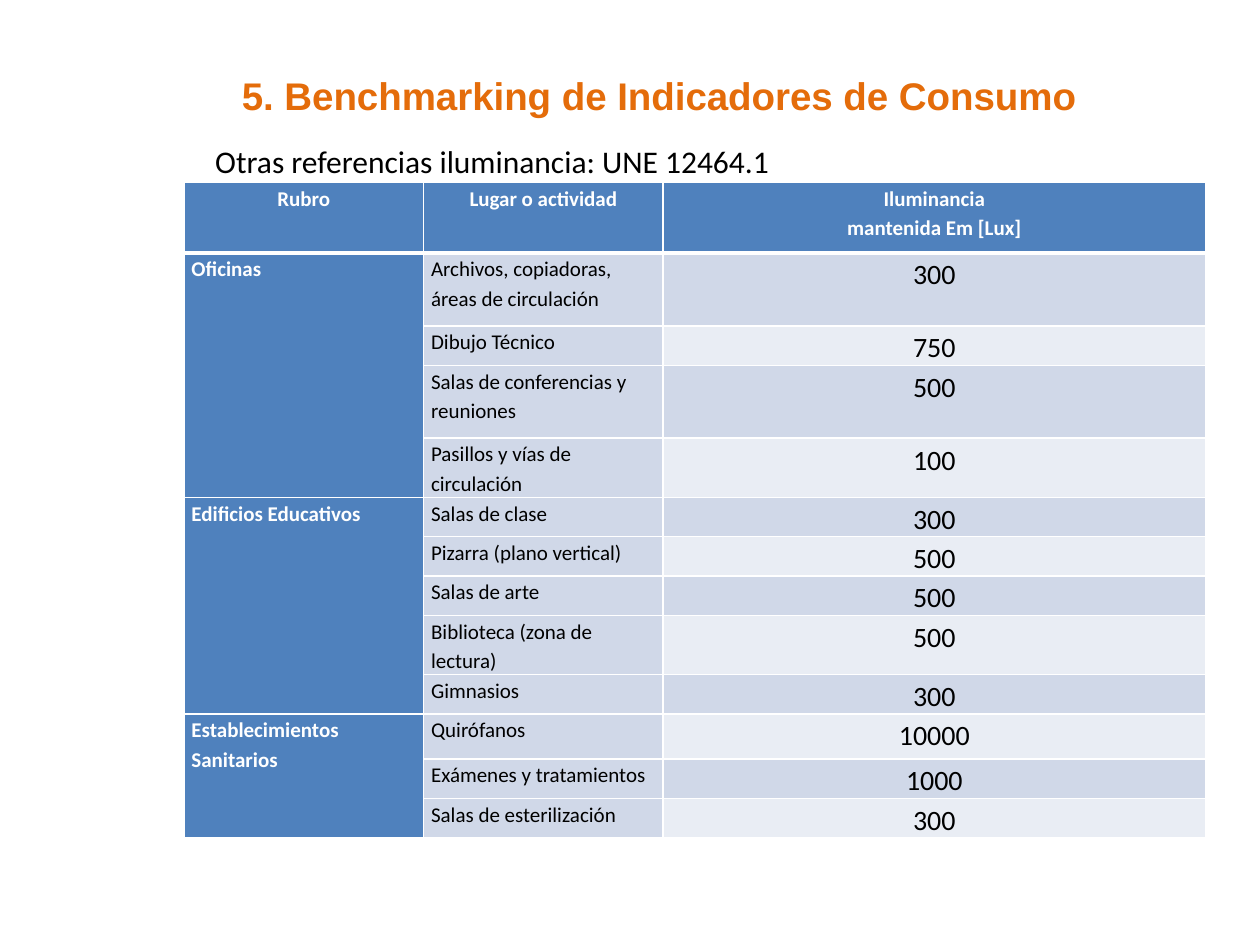
from dataclasses import dataclass

from lxml.etree import SubElement
from pptx import Presentation
from pptx.dml.color import RGBColor
from pptx.enum.text import MSO_ANCHOR, MSO_AUTO_SIZE, PP_ALIGN as Align
from pptx.oxml.ns import qn
from pptx.util import Cm, Pt


@dataclass(frozen=True)
class Theme:
    orange: str = "E46C0A"
    blue: str = "4F81BD"
    band: str = "D0D8E8"
    light_band: str = "E9EDF4"
    white: str = "FFFFFF"
    black: str = "000000"
    title_font: str = "Arial"
    body_font: str = "Calibri"
    title_size: int = 22
    subtitle_size: int = 18
    value_size: int = 16
    label_size: int = 12
    thin: int = 1
    thick: int = 3


THEME = Theme()

HEADINGS = ["Rubro", "Lugar o actividad", "Iluminancia\nmantenida Em [Lux]"]
SECTORS = {
    "Oficinas": [
        ("Archivos, copiadoras,\náreas de circulación", 300),
        ("Dibujo Técnico", 750),
        ("Salas de conferencias y\nreuniones", 500),
        ("Pasillos y vías de circulación", 100),
    ],
    "Edificios Educativos": [
        ("Salas de clase", 300),
        ("Pizarra (plano vertical)", 500),
        ("Salas de arte", 500),
        ("Biblioteca (zona de lectura)", 500),
        ("Gimnasios", 300),
    ],
    "Establecimientos Sanitarios": [
        ("Quirófanos", 10000),
        ("Exámenes y tratamientos", 1000),
        ("Salas de esterilización", 300),
    ],
}
COLUMN_WIDTHS = [4.83, 4.83, 10.93]
LINE, WRAPPED, SPACED = 0.79, 1.19, 1.47
ROW_HEIGHTS = [1.42, SPACED, LINE, SPACED, WRAPPED, LINE, LINE, LINE,
               WRAPPED, LINE, 0.91, LINE, LINE]


def style_font(paragraph, name, size, color, bold=False):
    font = paragraph.font
    font.name = name
    font.size = Pt(size)
    font.bold = bold
    font.color.rgb = RGBColor.from_string(color)


def add_title(slide, text):
    title = slide.shapes.title
    title.left, title.top, title.width, title.height = (
        Cm(4.62), Cm(1.32), Cm(18.26), Cm(1.14))
    frame = title.text_frame
    frame.text = text
    frame.auto_size = MSO_AUTO_SIZE.NONE
    frame.vertical_anchor = MSO_ANCHOR.TOP
    heading = frame.paragraphs[0]
    heading.alignment = Align.LEFT
    style_font(heading, THEME.title_font, THEME.title_size, THEME.orange, True)


def add_subtitle(slide, text):
    subtitle = slide.shapes.add_textbox(Cm(4.09), Cm(2.74), Cm(11.81), Cm(1.02))
    frame = subtitle.text_frame
    frame.word_wrap = False
    frame.text = text
    style_font(frame.paragraphs[0], THEME.body_font, THEME.subtitle_size, THEME.black)


def add_borders(cell, top, bottom):
    """Draw white borders; call before the fill, which must follow them in the XML."""
    properties = cell._tc.get_or_add_tcPr()
    widths = {"lnL": THEME.thin, "lnR": THEME.thin, "lnT": top, "lnB": bottom}
    for side, width in widths.items():
        line = SubElement(properties, qn(f"a:{side}"), w=str(Pt(width)))
        fill = SubElement(line, qn("a:solidFill"))
        SubElement(fill, qn("a:srgbClr"), val=THEME.white)


def fill_cell(cell, text, fill, size=THEME.label_size, color=THEME.black,
              bold=False, alignment=Align.LEFT):
    cell.margin_left = cell.margin_right = Cm(0.15)
    cell.margin_top = cell.margin_bottom = 0
    cell.fill.solid()
    cell.fill.fore_color.rgb = RGBColor.from_string(fill)
    cell.text_frame.text = text
    for paragraph in cell.text_frame.paragraphs:
        paragraph.alignment = alignment
        paragraph.line_spacing = 1.15
        style_font(paragraph, THEME.body_font, size, color, bold)


def add_illuminance_table(slide):
    table = slide.shapes.add_table(
        len(ROW_HEIGHTS), len(COLUMN_WIDTHS), Cm(3.71), Cm(3.68),
        Cm(sum(COLUMN_WIDTHS)), Cm(sum(ROW_HEIGHTS))).table
    for column, width in zip(table.columns, COLUMN_WIDTHS):
        column.width = Cm(width)
    for index, (row, height) in enumerate(zip(table.rows, ROW_HEIGHTS)):
        row.height = Cm(height)
        for cell in row.cells:
            add_borders(cell,
                        top=THEME.thick if index == 1 else THEME.thin,
                        bottom=THEME.thick if index == 0 else THEME.thin)

    for column, heading in enumerate(HEADINGS):
        fill_cell(table.cell(0, column), heading, THEME.blue,
                  color=THEME.white, bold=True, alignment=Align.CENTER)

    row = 1
    for sector, activities in SECTORS.items():
        sector_cell = table.cell(row, 0)
        sector_cell.merge(table.cell(row + len(activities) - 1, 0))
        fill_cell(sector_cell, sector, THEME.blue, color=THEME.white, bold=True)
        for activity, lux in activities:
            fill_cell(table.cell(row, 1), activity, THEME.band)
            fill_cell(table.cell(row, 2), str(lux),
                      THEME.band if row % 2 else THEME.light_band,
                      size=THEME.value_size, alignment=Align.CENTER)
            row += 1


def main():
    presentation = Presentation()
    presentation.slide_width = Cm(25.4)
    presentation.slide_height = Cm(19.05)
    slide = presentation.slides.add_slide(
        presentation.slide_layouts.get_by_name("Title Only"))
    add_illuminance_table(slide)
    add_title(slide, "5. Benchmarking de Indicadores de Consumo")
    add_subtitle(slide, "Otras referencias iluminancia: UNE 12464.1")
    presentation.save("out.pptx")


if __name__ == "__main__":
    main()
